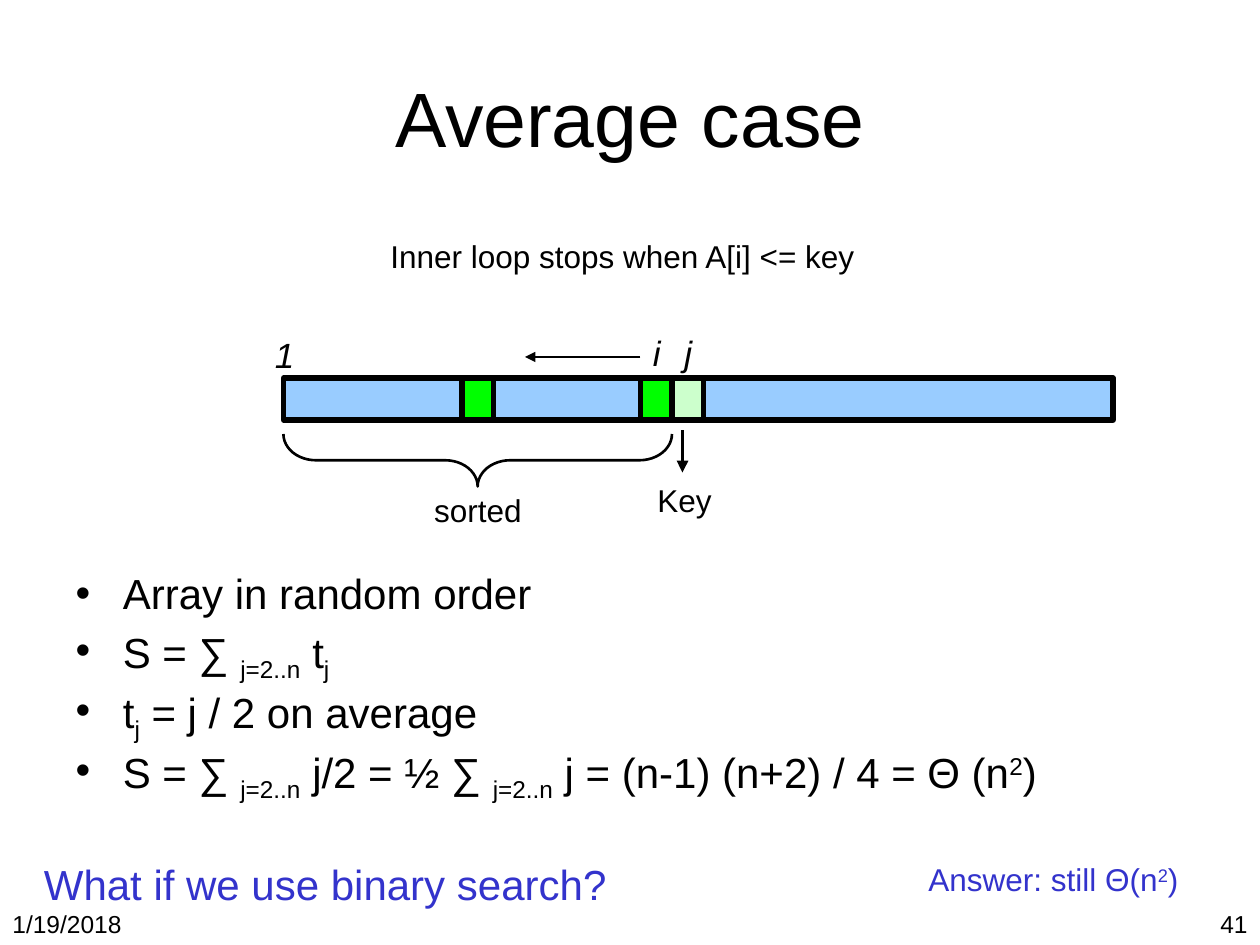
from dataclasses import dataclass
from typing import Any, NamedTuple

import pptx
import pptx.dml.color
import pptx.enum.shapes
import pptx.enum.text
import pptx.oxml.ns
import pptx.util
from lxml import etree

Pt = pptx.util.Pt
SHAPE = pptx.enum.shapes.MSO_SHAPE
ALIGN = pptx.enum.text.PP_ALIGN
AUTOSIZE = pptx.enum.text.MSO_AUTO_SIZE


@dataclass(frozen=True)
class Theme:
    font: str = "Arial"
    ink: str = "000000"
    question: str = "3333CC"
    array: str = "99CCFF"
    key: str = "CCFFCC"
    compared: str = "00FF00"
    title: int = 44
    body: int = 24
    index: int = 20
    label: int = 18
    footer: int = 14


THEME = Theme()
SUB, SUPER = -25000, 30000


class Run(NamedTuple):
    text: str
    baseline: int = 0


class Cell(NamedTuple):
    left: float
    width: float
    color: str


class Label(NamedTuple):
    left: float
    top: float
    width: float
    height: float
    runs: list[Run]
    size: int = THEME.label
    color: str = THEME.ink
    italic: bool = False
    wrap: bool = False
    align: Any = ALIGN.LEFT


class Arrow(NamedTuple):
    x1: float
    y1: float
    x2: float
    y2: float
    weight: float


BAR_LEFT, BAR_TOP, BAR_WIDTH, BAR_HEIGHT = 162, 216, 474, 24
CELL = 18
J_LEFT = 384
I_LEFT = J_LEFT - CELL
BRACE_DEPTH = 30
BRACE_MIDDLE = 263

CELLS = [
    Cell(BAR_LEFT, BAR_WIDTH, THEME.array),
    Cell(J_LEFT, CELL, THEME.key),
    Cell(264, CELL, THEME.compared),
    Cell(I_LEFT, CELL, THEME.compared),
]

ARROWS = [
    Arrow(I_LEFT, 204, 300, 204, 1.5),
    Arrow(390, 246, 390, 270, 2.25),
]

LABELS = [
    Label(0, 516, 168, 24, [Run("1/19/2018")], THEME.footer, wrap=True),
    Label(552, 516, 168, 24, [Run("41")], THEME.footer, wrap=True, align=ALIGN.RIGHT),
    Label(150, 187, 26, 31, [Run("1")], THEME.index, italic=True),
    Label(I_LEFT, 186, 18.5, 31, [Run("i")], THEME.index, italic=True),
    Label(J_LEFT, 186, 18.5, 31, [Run("j")], THEME.index, italic=True),
    Label(241, 277, 65, 29, [Run("sorted")]),
    Label(216, 132, 281, 29, [Run("Inner loop stops when A[i] <= key")]),
    Label(368.5, 271.5, 45.5, 29, [Run("Key")]),
    Label(18, 487, 552, 36, [Run("What if we use binary search?")],
          THEME.body, THEME.question, wrap=True),
    Label(523.5, 488, 158, 29, [Run("Answer: still Θ(n"), Run("2", SUPER), Run(")")],
          color=THEME.question),
]

RANGE = Run("j=2..n", SUB)
BULLETS = [
    [Run("Array in random order")],
    [Run("S = ∑ "), RANGE, Run(" t"), Run("j", SUB)],
    [Run("t"), Run("j", SUB), Run(" = j / 2 on average")],
    [Run("S = ∑ "), RANGE, Run(" j/2 = ½ ∑ "), RANGE,
     Run(" j = (n-1) (n+2) / 4 = Θ (n"), Run("2", SUPER), Run(")")],
]


def rgb(color: str) -> Any:
    return pptx.dml.color.RGBColor.from_string(color)


def place(sp: Any, left: float, top: float, width: float, height: float) -> None:
    box = {"left": left, "top": top, "width": width, "height": height}
    for name, value in box.items():
        setattr(sp, name, Pt(value))


def add_runs(p: Any, runs: list[Run], size: int,
             color: str = THEME.ink, italic: bool = False) -> None:
    formats = {"name": THEME.font, "size": Pt(size), "italic": italic}
    for run in runs:
        r = p.add_run()
        r.text = run.text
        for name, value in formats.items():
            setattr(r.font, name, value)
        r.font.color.rgb = rgb(color)
        if run.baseline:
            r.font._element.set("baseline", str(run.baseline))


def set_line(line: Any, weight: float) -> None:
    line.color.rgb = rgb(THEME.ink)
    line.width = Pt(weight)


def add_cell(s: Any, cell: Cell) -> None:
    sp = s.shapes.add_shape(SHAPE.RECTANGLE, Pt(cell.left), Pt(BAR_TOP),
                            Pt(cell.width), Pt(BAR_HEIGHT))
    sp.shadow.inherit = False
    sp.fill.solid()
    sp.fill.fore_color.rgb = rgb(cell.color)
    set_line(sp.line, 3)


def add_brace(s: Any, left: float, right: float) -> None:
    span, middle = right - left, (left + right) / 2
    sp = s.shapes.add_shape(SHAPE.LEFT_BRACE, Pt(middle - BRACE_DEPTH / 2),
                            Pt(BRACE_MIDDLE - span / 2), Pt(BRACE_DEPTH), Pt(span))
    sp.rotation = 270
    sp.adjustments[0] = 0.62
    sp.adjustments[1] = 0.5
    sp.shadow.inherit = False
    sp.fill.background()
    set_line(sp.line, 1.5)


def add_arrow(s: Any, arrow: Arrow) -> None:
    sp = s.shapes.add_connector(pptx.enum.shapes.MSO_CONNECTOR.STRAIGHT,
                                Pt(arrow.x1), Pt(arrow.y1), Pt(arrow.x2), Pt(arrow.y2))
    set_line(sp.line, arrow.weight)
    qn = pptx.oxml.ns.qn
    etree.SubElement(sp.line._get_or_add_ln(), qn("a:tailEnd"), type="triangle")
    etree.SubElement(sp._element.spPr, qn("a:effectLst"))


def add_label(s: Any, label: Label) -> None:
    sp = s.shapes.add_textbox(Pt(label.left), Pt(label.top),
                              Pt(label.width), Pt(label.height))
    tf = sp.text_frame
    tf.word_wrap = label.wrap
    p = tf.paragraphs[0]
    p.alignment = label.align
    add_runs(p, label.runs, label.size, label.color, label.italic)


def main() -> None:
    prs = pptx.Presentation()
    prs.slide_width, prs.slide_height = Pt(720), Pt(540)
    s = prs.slides.add_slide(prs.slide_layouts[1])

    title, body = s.placeholders
    place(title, 36, 21.6, 648, 90)
    title.text_frame.auto_size = AUTOSIZE.NONE
    add_runs(title.text_frame.paragraphs[0], [Run("Average case")], THEME.title)

    place(body, 36, 324, 648, 158.4)
    tf = body.text_frame
    tf.auto_size = AUTOSIZE.NONE
    for number, runs in enumerate(BULLETS):
        p = tf.add_paragraph() if number else tf.paragraphs[0]
        p.line_spacing = 0.9
        add_runs(p, runs, THEME.body)

    for cell in CELLS:
        add_cell(s, cell)
    add_brace(s, BAR_LEFT, J_LEFT)
    for arrow in ARROWS:
        add_arrow(s, arrow)
    for label in LABELS:
        add_label(s, label)
    prs.save("out.pptx")


if __name__ == "__main__":
    main()
